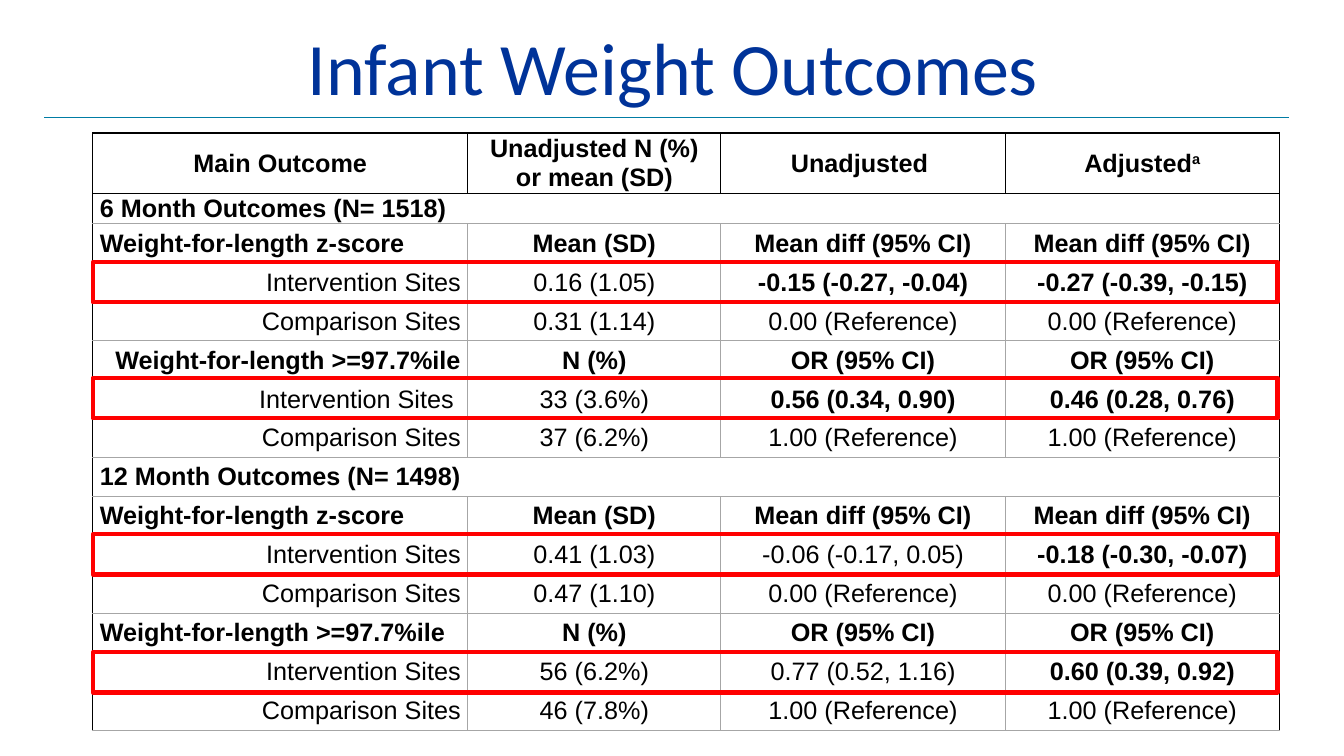
from lxml import etree
from pptx import Presentation
from pptx.dml.color import RGBColor
from pptx.enum.shapes import MSO_CONNECTOR as Line, MSO_SHAPE as Shape
from pptx.enum.text import MSO_ANCHOR as Anchor, PP_ALIGN as Align
from pptx.oxml.ns import qn
from pptx.util import Inches, Pt

BLACK = RGBColor(0, 0, 0)
WHITE = RGBColor(0xFF, 0xFF, 0xFF)
GREY = RGBColor(0xA6, 0xA6, 0xA6)
BLUE = RGBColor(0x00, 0x33, 0x99)
TEAL = RGBColor(0x00, 0x7C, 0xA4)
RED = RGBColor(0xFF, 0, 0)

LEFT, MID, RIGHT = Align.LEFT, Align.CENTER, Align.RIGHT
WIDTHS = [3.72, 2.51, 2.82, 2.72]
HEAD, SUB, BODY = 0.56, 0.28, 5.03  # heights: header, first band, other rows

MEAN = ["Mean (SD)", "Mean diff (95% CI)", "Mean diff (95% CI)"]
ODDS = ["N (%)", "OR (95% CI)", "OR (95% CI)"]
ZERO = ["0.00 (Reference)"] * 2
ONE = ["1.00 (Reference)"] * 2
SCORE = "Weight-for-length z-score"
TILE = "Weight-for-length >=97.7%ile"
CASE, BASE = "Intervention Sites", "Comparison Sites"

# Label alignment, whole row bold, cells; a leading * marks a bold result
ROWS = [
    (MID, True, ["Main Outcome", "Unadjusted N (%) or mean (SD)",
                 "Unadjusted ", "Adjusted"]),
    (LEFT, True, ["6 Month Outcomes (N= 1518)"]),
    (LEFT, True, [SCORE, *MEAN]),
    (RIGHT, False, [CASE, "0.16 (1.05)", "*-0.15 (-0.27, -0.04)",
                    "*-0.27 (-0.39, -0.15)"]),
    (RIGHT, False, [BASE, "0.31 (1.14)", *ZERO]),
    (RIGHT, True, [TILE, *ODDS]),
    (RIGHT, False, [CASE + " ", "33 (3.6%)", "*0.56 (0.34, 0.90)",
                    "*0.46 (0.28, 0.76)"]),
    (RIGHT, False, [BASE, "37 (6.2%)", *ONE]),
    (LEFT, True, ["12 Month Outcomes (N= 1498)"]),
    (LEFT, True, [SCORE, *MEAN]),
    (RIGHT, False, [CASE, "0.41 (1.03)", "-0.06 (-0.17, 0.05)",
                    "*-0.18 (-0.30, -0.07)"]),
    (RIGHT, False, [BASE, "0.47 (1.10)", *ZERO]),
    (LEFT, True, [TILE, *ODDS]),
    (RIGHT, False, [CASE, "56 (6.2%)", "0.77 (0.52, 1.16)",
                    "*0.60 (0.39, 0.92)"]),
    (RIGHT, False, [BASE, "46 (7.8%)", *ONE]),
]


def write(frame, text, size=18, font="Arial", color=BLACK, bold=False,
          align=MID, raised=False):
    para = frame.paragraphs[0]
    para.alignment = align
    run = para.add_run()
    run.text = text
    run.font.size, run.font.name, run.font.bold = Pt(size), font, bold
    run.font.color.rgb = color
    if raised:
        run.font._element.set("baseline", "30000")


def edge(cell, side, color):
    line = etree.SubElement(cell._tc.get_or_add_tcPr(), qn("a:ln" + side),
                            w=str(Pt(1)))
    fill = etree.SubElement(line, qn("a:solidFill"))
    etree.SubElement(fill, qn("a:srgbClr"), val=str(color))


def title(slide, x, y, w, h):
    box = slide.shapes.add_textbox(Inches(x), Inches(y), Inches(w), Inches(h))
    box.fill.solid()
    box.fill.fore_color.rgb = WHITE
    frame = box.text_frame
    frame.word_wrap = True
    frame.vertical_anchor = Anchor.MIDDLE
    write(frame, "Infant Weight Outcomes", size=52.8, font="Calibri",
          color=BLUE)
    # Rule below the title
    level = Inches(y + h + 0.06)
    rule = slide.shapes.add_connector(Line.STRAIGHT, Inches(x + 0.09), level,
                                      Inches(x + w - 0.22), level)
    rule.line.color.rgb = TEAL
    rule.line.width = Pt(0.75)
    etree.SubElement(rule._element.spPr, qn("a:effectLst"))


def results(slide, x, y, w, h):
    grid = slide.shapes.add_table(len(ROWS), len(WIDTHS), Inches(x), Inches(y),
                                  Inches(w), Inches(h)).table
    grid.first_row = grid.horz_banding = False
    for col, width in zip(grid.columns, WIDTHS):
        col.width = Inches(width)
    step = BODY / (len(ROWS) - 2)
    tall = [HEAD, SUB] + [step] * (len(ROWS) - 2)
    last = len(WIDTHS) - 1

    for r, (align, bold, texts) in enumerate(ROWS):
        grid.rows[r].height = Inches(tall[r])
        band = len(texts) == 1
        if band:
            grid.cell(r, 0).merge(grid.cell(r, last))
        for c in range(last + 1):
            cell = grid.cell(r, c)
            cell.margin_left = cell.margin_right = Inches(0.07)
            cell.margin_top = cell.margin_bottom = 0
            cell.vertical_anchor = Anchor.MIDDLE
            # Black frame and header, grey inner lines
            dark = {"L": r == 0 or c == 0 or band,
                    "R": r == 0 or c == last or band,
                    "T": r < 2, "B": r == 0}
            for side, black in dark.items():
                if not (band and c and side == "L"):
                    edge(cell, side, BLACK if black else GREY)
            cell.fill.background()
            if c < len(texts):
                text = texts[c]
                write(cell.text_frame, text.lstrip("*"),
                      bold=bold or text.startswith("*"),
                      align=MID if c else align)
    write(grid.cell(0, last).text_frame, "a", bold=True, raised=True)


def mark(slide, x, y, w, h):
    box = slide.shapes.add_shape(Shape.RECTANGLE, Inches(x), Inches(y),
                                 Inches(w), Inches(h))
    box.shadow.inherit = False
    box.fill.background()
    box.line.color.rgb = RED
    box.line.width = Pt(3)


def main():
    deck = Presentation()
    deck.slide_width, deck.slide_height = Inches(13.33), Inches(7.5)
    slide = deck.slides.add_slide(deck.slide_layouts[6])
    title(slide, 0.35, 0.19, 12.65, 0.92)
    results(slide, 0.92, 1.32, sum(WIDTHS), HEAD + SUB + BODY)
    # Frames around the intervention rows
    for top in (2.6, 3.75, 5.3, 6.47):
        mark(slide, 0.92, top, 11.75, 0.4)
    deck.save("out.pptx")


if __name__ == "__main__":
    main()
